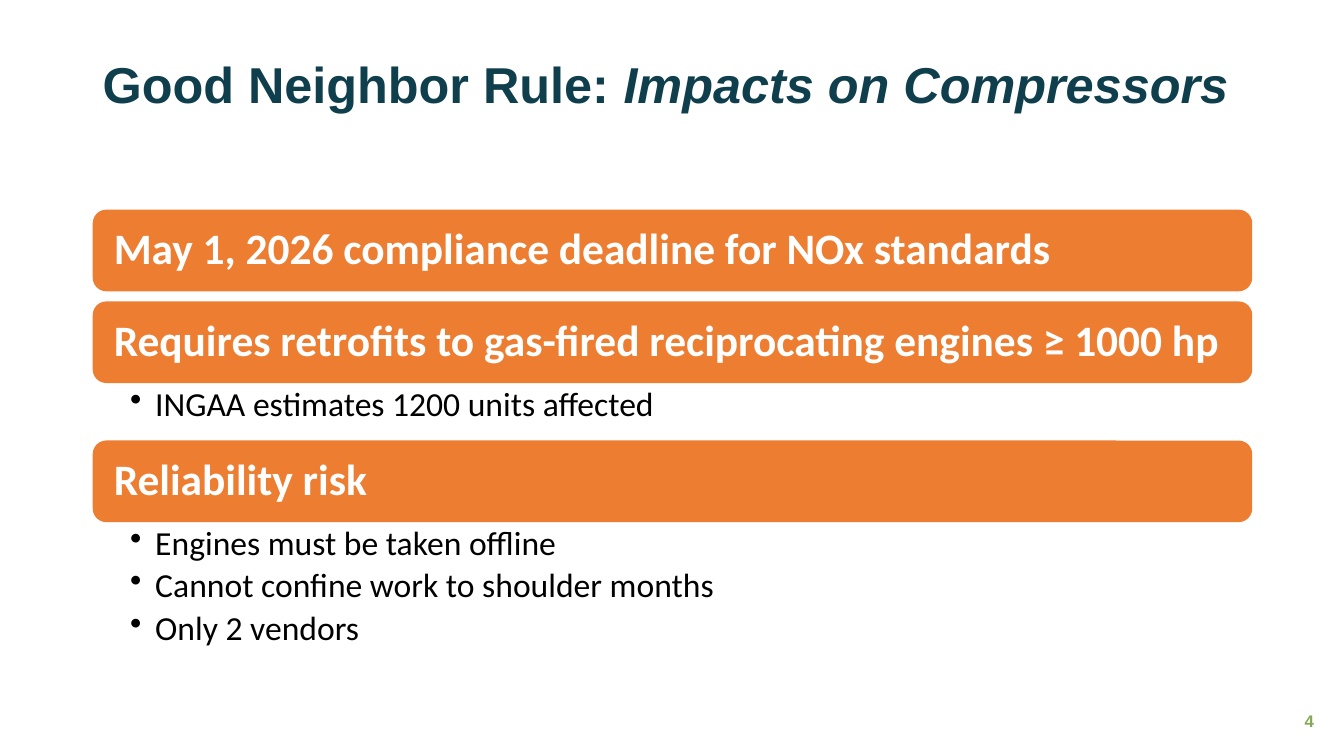
import pptx
import pptx.dml.color
import pptx.enum.shapes
import pptx.enum.text
import pptx.oxml.ns
import pptx.util
from lxml import etree

Inches = pptx.util.Inches
Pt = pptx.util.Pt
RGBColor = pptx.dml.color.RGBColor
Align = pptx.enum.text.PP_ALIGN
Anchor = pptx.enum.text.MSO_ANCHOR

NAVY = RGBColor(0x0F, 0x3E, 0x4D)
ORANGE = RGBColor(0xED, 0x7D, 0x31)
GREEN = RGBColor(0x84, 0xA8, 0x56)
WHITE = RGBColor(0xFF, 0xFF, 0xFF)
BLACK = RGBColor(0x00, 0x00, 0x00)

LEFT, WIDTH = 0.92, 11.5
BANNER_HEIGHT = 0.81

# Banner top, banner text, bullets below it and their height
SECTIONS = [
    (2.08, "May 1, 2026 compliance deadline for NOx standards", [], 0),
    (2.99, "Requires retrofits to gas-fired reciprocating engines ≥ 1000 hp",
     ["INGAA estimates 1200 units affected"], 0.56),
    (4.37, "Reliability risk",
     ["Engines must be taken offline",
      "Cannot confine work to shoulder months",
      "Only 2 vendors"], 1.37),
]


class SlideBuilder:
    heading_font = "Arial"
    body_font = "Calibri"

    def __init__(self, deck):
        self.page = deck.slides.add_slide(deck.slide_layouts[6])

    def frame(self, shape, anchor, insets=(0.1, 0.05, 0.1, 0.05)):
        frame = shape.text_frame
        frame.word_wrap = True
        frame.vertical_anchor = anchor
        (frame.margin_left, frame.margin_top,
         frame.margin_right, frame.margin_bottom) = map(Inches, insets)
        return frame

    def text_box(self, left, top, width, height, *layout):
        box = self.page.shapes.add_textbox(
            Inches(left), Inches(top), Inches(width), Inches(height))
        return self.frame(box, *layout)

    def style(self, para, font, size, color, bold=False, align=Align.LEFT):
        para.alignment = align
        para.line_spacing = 0.9
        para.font.name = font
        para.font.size = Pt(size)
        para.font.color.rgb = color
        para.font.bold = bold

    def title(self, plain, emphasis):
        frame = self.text_box(LEFT, 0.14, WIDTH, 1.45, Anchor.MIDDLE)
        para = frame.paragraphs[0]
        para.add_run().text = plain
        span = para.add_run()
        span.text = emphasis
        span.font.italic = True
        self.style(para, self.heading_font, 36, NAVY, bold=True)

    def banner(self, top, text):
        shape = self.page.shapes.add_shape(
            pptx.enum.shapes.MSO_SHAPE.ROUNDED_RECTANGLE,
            Inches(LEFT), Inches(top), Inches(WIDTH), Inches(BANNER_HEIGHT))
        shape.shadow.inherit = False
        shape.fill.solid()
        shape.fill.fore_color.rgb = ORANGE
        shape.line.fill.background()
        frame = self.frame(shape, Anchor.MIDDLE, (0.17, 0.13, 0.17, 0.13))
        frame.text = text
        self.style(frame.paragraphs[0], self.body_font, 31, WHITE, bold=True)

    def bullets(self, top, height, items):
        frame = self.text_box(LEFT, top, WIDTH, height, Anchor.TOP,
                              (0.37, 0.04, 0.24, 0.04))
        frame.text = "\n".join(items)
        for para in frame.paragraphs:
            properties = para._p.get_or_add_pPr()
            properties.set("marL", str(Inches(0.25)))
            properties.set("indent", str(Inches(-0.25)))
            bullet = etree.SubElement(properties, pptx.oxml.ns.qn("a:buChar"))
            bullet.set("char", "•")
            para.space_after = Pt(4.5)
            self.style(para, self.body_font, 24, BLACK)

    def page_number(self, number):
        frame = self.text_box(12.42, 6.96, 0.71, 0.4, Anchor.MIDDLE)
        frame.text = str(number)
        self.style(frame.paragraphs[0], self.heading_font, 12, GREEN,
                   bold=True, align=Align.RIGHT)


def main():
    deck = pptx.Presentation()
    deck.slide_width = Inches(13.33)
    deck.slide_height = Inches(7.5)
    builder = SlideBuilder(deck)

    # Heading
    builder.title("Good Neighbor Rule: ", "Impacts on Compressors")

    # Banners with their bullets
    for top, heading, items, height in SECTIONS:
        builder.banner(top, heading)
        if items:
            builder.bullets(top + BANNER_HEIGHT, height, items)

    # Footer
    builder.page_number(4)
    deck.save("out.pptx")


if __name__ == "__main__":
    main()
